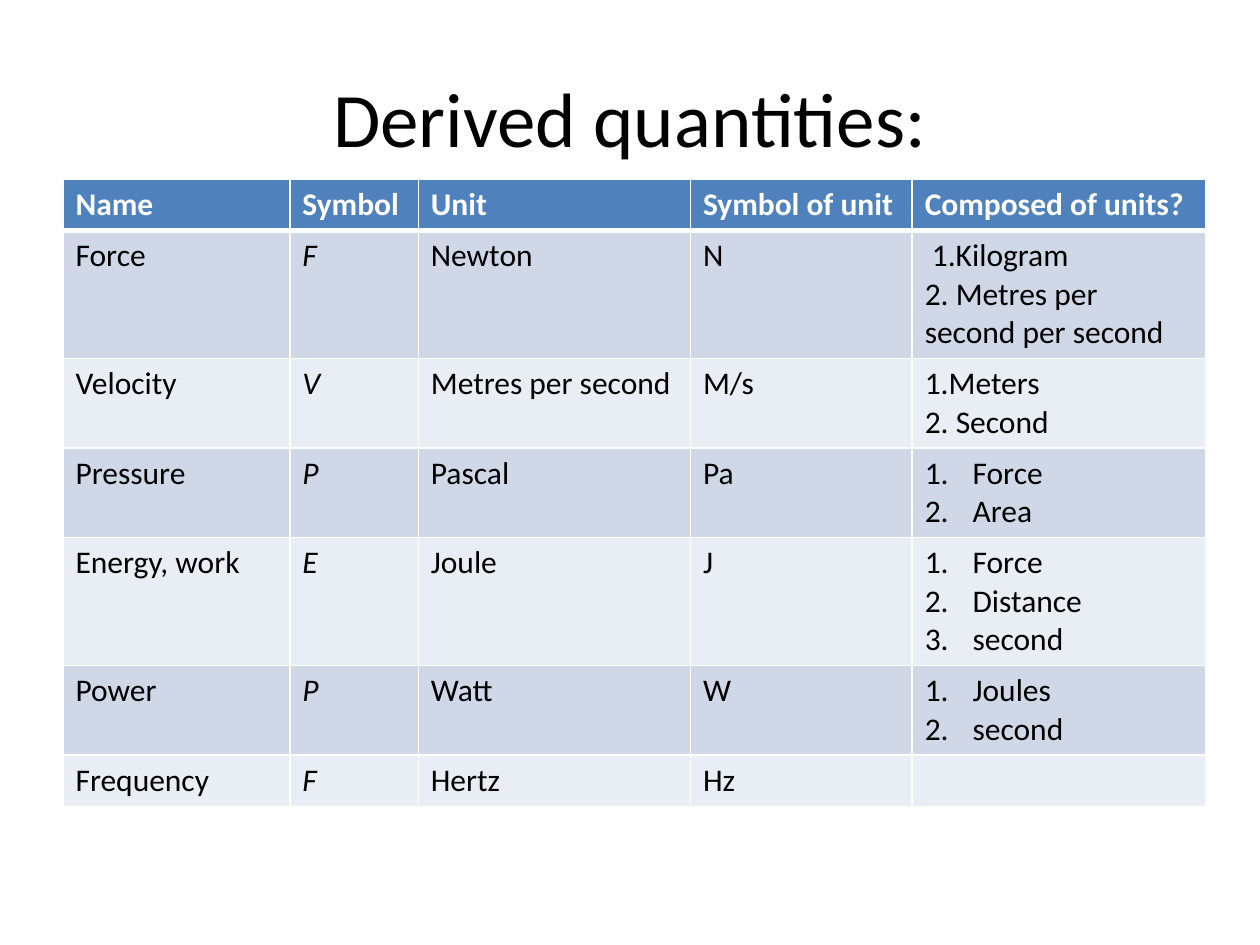
"""Builds a slide with a table of derived physical quantities."""
import pptx
import pptx.dml.color
import pptx.enum.text
import pptx.oxml
import pptx.oxml.ns
import pptx.util
import lxml.etree

Inches = pptx.util.Inches
Pt = pptx.util.Pt


def color(hex_value):
    """Return the colour for a hex string."""
    return pptx.dml.color.RGBColor.from_string(hex_value)


def add_border(cell, side, points, hex_value):
    """Append one border line to a cell that has no fill yet."""
    namespace = pptx.oxml.ns.nsdecls("a")
    line = pptx.oxml.parse_xml(
        f'<a:ln{side} {namespace} w="{Pt(points)}"><a:solidFill>'
        f'<a:srgbClr val="{hex_value}"/></a:solidFill></a:ln{side}>'
    )
    cell._tc.get_or_add_tcPr().append(line)


headings = ["Name", "Symbol", "Unit", "Symbol of unit", "Composed of units?"]
quantities = [
    ["Force", "F", "Newton", "N", " 1.Kilogram\n2. Metres per second per second"],
    ["Velocity", "V", "Metres per second", "M/s", "1.Meters\n2. Second"],
    ["Pressure", "P", "Pascal", "Pa", "Force\nArea"],
    ["Energy, work", "E", "Joule", "J", "Force\nDistance\nsecond"],
    ["Power", "P", "Watt", "W", "Joules\nsecond"],
    ["Frequency", "F", "Hertz", "Hz", ""],
]
numbered_names = {"Pressure", "Energy, work", "Power"}
column_widths = [1.8, 1.02, 2.16, 1.76, 2.33]
row_heights = [0.41, 0.34] + [0.41] * 5

presentation = pptx.Presentation()
presentation.slide_width = Inches(10)
presentation.slide_height = Inches(7.5)
slide = presentation.slides.add_slide(presentation.slide_layouts[5])

title = slide.shapes.title
title.left, title.top = Inches(0.5), Inches(0.3)
title.width, title.height = Inches(9), Inches(1.25)
title.text_frame.text = "Derived quantities:"
title.text_frame.vertical_anchor = pptx.enum.text.MSO_ANCHOR.MIDDLE
heading = title.text_frame.paragraphs[0]
heading.alignment = pptx.enum.text.PP_ALIGN.CENTER
heading.runs[0].font.name = "Calibri"
heading.runs[0].font.size = Pt(44)
heading.runs[0].font.color.rgb = color("000000")

rows = [headings] + quantities
table = slide.shapes.add_table(
    len(rows), len(headings), Inches(0.5), Inches(1.42),
    Inches(sum(column_widths)), Inches(sum(row_heights)),
).table
for column, width in zip(table.columns, column_widths):
    column.width = Inches(width)
for row, height in zip(table.rows, row_heights):
    row.height = Inches(height)

for row_index, values in enumerate(rows):
    is_header = row_index == 0
    if is_header:
        fill = "4F81BD"
    else:
        fill = "D0D8E8" if row_index % 2 else "E9EDF4"
    for column_index, value in enumerate(values):
        cell = table.cell(row_index, column_index)
        for side in "LRTB":
            below_header = (side == "B" and is_header) or (side == "T" and row_index == 1)
            add_border(cell, side, 3 if below_header else 1, "FFFFFF")
        cell.fill.solid()
        cell.fill.fore_color.rgb = color(fill)
        cell.text_frame.text = value
        for paragraph in cell.text_frame.paragraphs:
            paragraph.font.size = Pt(18)
            for run in paragraph.runs:
                run.font.name = "Calibri"
                run.font.size = Pt(18)
                run.font.bold = is_header
                run.font.italic = column_index == 1 and not is_header
                run.font.color.rgb = color("FFFFFF" if is_header else "000000")
            if column_index == 4 and values[0] in numbered_names:
                properties = paragraph._p.get_or_add_pPr()
                properties.set("marL", str(Inches(0.38)))
                properties.set("indent", str(Inches(-0.38)))
                numbering = lxml.etree.Element(pptx.oxml.ns.qn("a:buAutoNum"), type="arabicPeriod")
                properties.insert(0, numbering)

presentation.save("out.pptx")
